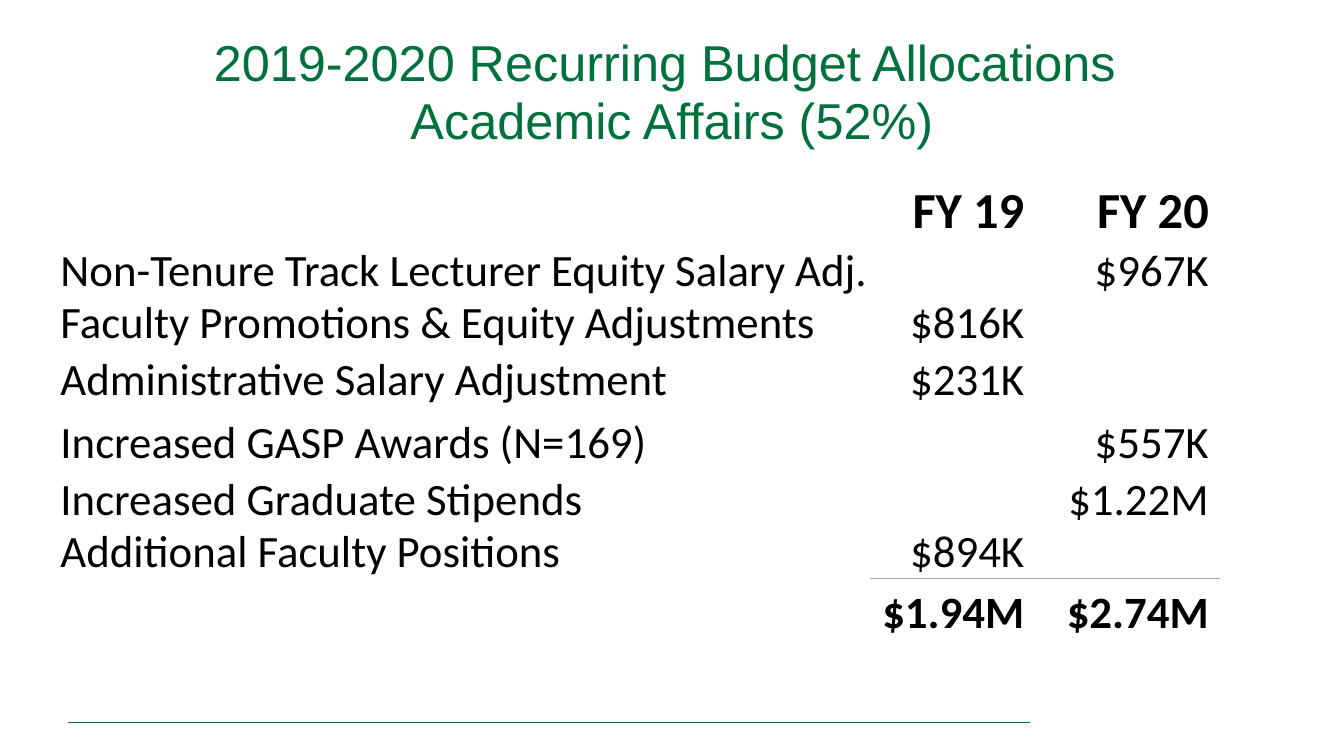
import pptx
import pptx.util
import pptx.dml.color
import pptx.enum.shapes
import pptx.enum.text
import pptx.oxml
import pptx.oxml.ns

Inches = pptx.util.Inches
Pt = pptx.util.Pt
Align = pptx.enum.text.PP_ALIGN
Anchor = pptx.enum.text.MSO_ANCHOR

GREEN, BLACK, GREY = "00703C", "000000", "A6A6A6"
TITLE = "2019-2020 Recurring Budget Allocations \vAcademic Affairs (52%)"
COLS = [8.13, 1.73, 1.73]
RIGHT = [0, 0.2, 0.1]
BUDGET = [
    ("", "FY 19", "FY 20", 0.05),
    ("Non-Tenure Track Lecturer Equity Salary Adj.", "", "$967K", 0),
    ("Faculty Promotions & Equity Adjustments", "$816K", "", 0),
    ("Administrative Salary Adjustment", "$231K", "", 0.05),
    ("Increased GASP Awards (N=169)", "", "$557K", 0.05),
    ("Increased Graduate Stipends", "", "$1.22M", 0),
    ("Additional Faculty Positions", "$894K", "", 0),
    ("", "$1.94M", "$2.74M", 0),
]
LAST = len(BUDGET) - 1


def color(code):
    return pptx.dml.color.RGBColor.from_string(code)


def style(frame, face, size, code, align, bold=False):
    for para in frame.paragraphs:
        para.alignment = align
        para.line_spacing = 0.95
        for run in para.runs:
            run.font.name = face
            run.font.size = Pt(size)
            run.font.bold = bold
            run.font.color.rgb = color(code)


def add_title(slide, left, top, width, height):
    title = slide.shapes.title
    title.left, title.top = Inches(left), Inches(top)
    title.width, title.height = Inches(width), Inches(height)
    frame = title.text_frame
    frame.text = TITLE
    frame.word_wrap = True
    frame.auto_size = pptx.enum.text.MSO_AUTO_SIZE.NONE
    frame.vertical_anchor = Anchor.MIDDLE
    style(frame, "Arial", 36, GREEN, Align.CENTER)


def add_edge(cell, side):
    edge = pptx.oxml.parse_xml(
        f'<a:{side} {pptx.oxml.ns.nsdecls("a")} w="3175"><a:solidFill>'
        f'<a:srgbClr val="{GREY}"/></a:solidFill></a:{side}>')
    cell._tc.get_or_add_tcPr().insert(0, edge)


def fill_cell(cell, row, col, text, pad):
    cell.fill.background()
    cell.vertical_anchor = Anchor.MIDDLE
    cell.margin_left = Inches(0 if col == 1 else 0.1)
    cell.margin_right = Inches(RIGHT[col])
    cell.margin_top = cell.margin_bottom = Inches(pad)
    cell.text_frame.text = text
    align = Align.RIGHT if col else Align.LEFT
    size = 32 if row else 36
    style(cell.text_frame, "Calibri", size, BLACK, align, row in (0, LAST))
    if col and row >= LAST - 1:
        add_edge(cell, "lnT" if row == LAST else "lnB")


def add_budget(slide, left, top, width, height):
    frame = slide.shapes.add_table(
        len(BUDGET), len(COLS), Inches(left), Inches(top),
        Inches(width), Inches(height))
    table = frame.table
    table.first_row = table.horz_banding = False
    for col, size in enumerate(COLS):
        table.columns[col].width = Inches(size)
    for row, (*texts, pad) in enumerate(BUDGET):
        table.rows[row].height = Inches(0.69 if row == LAST else 0.51)
        for col, text in enumerate(texts):
            fill_cell(table.cell(row, col), row, col, text, pad)


def add_rule(slide, left, top, width):
    rule = slide.shapes.add_connector(
        pptx.enum.shapes.MSO_CONNECTOR.STRAIGHT,
        Inches(left), Inches(top), Inches(left + width), Inches(top))
    rule.line.color.rgb = color(GREEN)
    rule.line.width = Pt(0.75)
    rule._element.spPr.append(pptx.oxml.parse_xml(
        f'<a:effectLst {pptx.oxml.ns.nsdecls("a")}/>'))


def main():
    deck = pptx.Presentation()
    deck.slide_width, deck.slide_height = Inches(13.33), Inches(7.5)
    slide = deck.slides.add_slide(deck.slide_layouts[5])
    add_rule(slide, 0.67, 7.17, 9.55)
    add_title(slide, 0, 0.3, 13.33, 1.25)
    add_budget(slide, 0.5, 1.75, sum(COLS), 4.61)
    deck.save("out.pptx")


if __name__ == "__main__":
    main()
